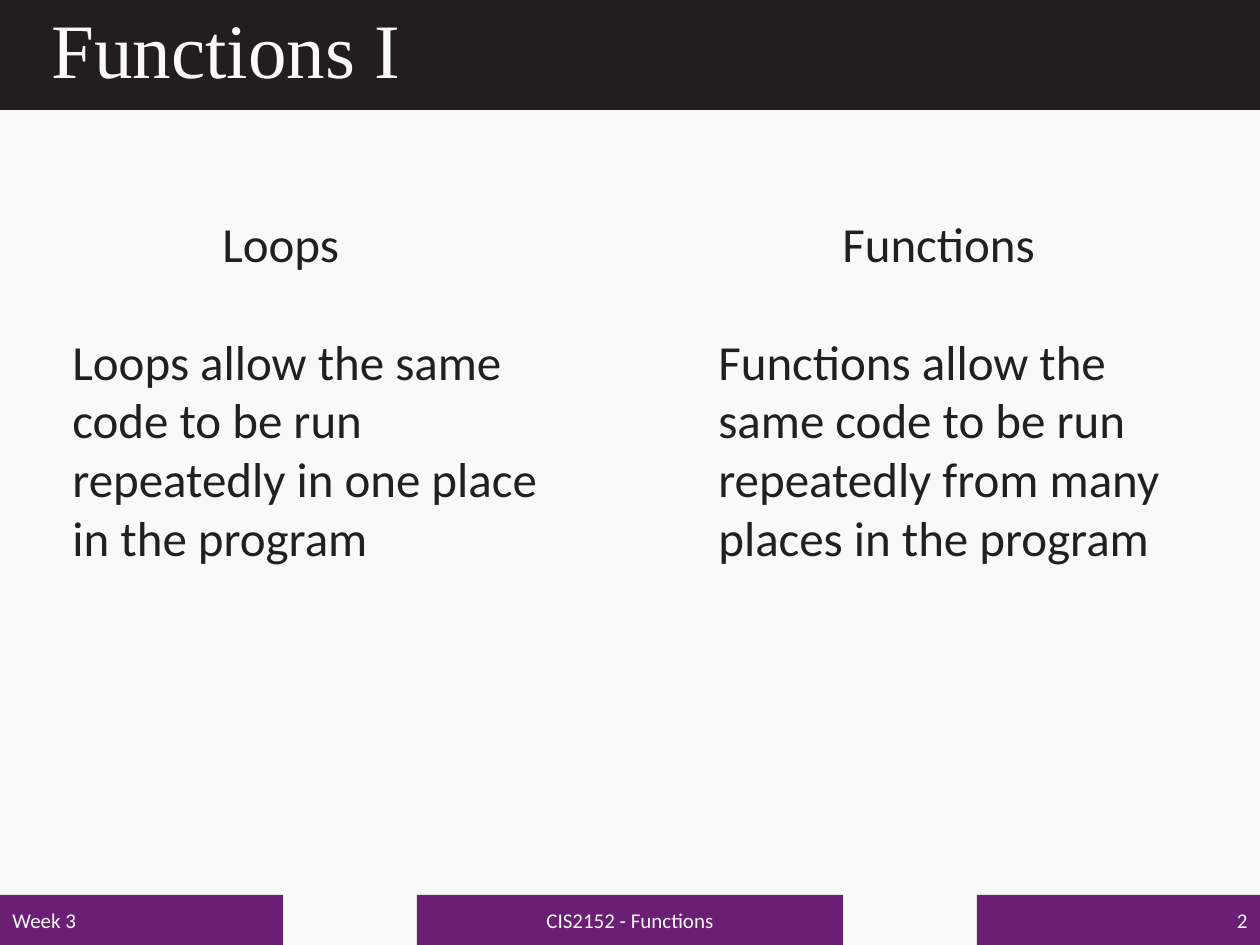
from pptx import Presentation
from pptx import util as u
from pptx.dml import color
from pptx.enum import shapes, text

PX = 914400 // 126
W, H = 1260, 945
COLORS = {"paper": "F9F9F9", "band": "221E1F", "purple": "6A1F74", "ink": "202020"}
ALIGN = text.PP_ALIGN
ANCHOR = text.MSO_ANCHOR

TITLE = "Functions I"
COLUMNS = [
    ("Loops", 210, 146,
     "Loops allow the same code to be run repeatedly in one place in the program", 60, 527),
    ("Functions", 830, 221,
     "Functions allow the same code to be run repeatedly from many places in the program", 706, 490),
]
HEADING_Y, HEADING_H = 207, 72
BODY_Y, BODY_H = 325, 251
FOOTER_H = 50
FOOTER = [
    ("Week 3", 0, 283, ALIGN.LEFT),
    ("CIS2152 - Functions", 417, 426, ALIGN.CENTER),
    ("2", W - 283, 283, ALIGN.RIGHT),
]


def rgb(name):
    return color.RGBColor.from_string(COLORS[name])


def add_bar(s, x, y, w, h, fill):
    sp = s.shapes.add_shape(shapes.MSO_SHAPE.RECTANGLE, *(v * PX for v in (x, y, w, h)))
    sp.shadow.inherit = False
    sp.fill.solid()
    sp.fill.fore_color.rgb = rgb(fill)
    sp.line.fill.background()
    return sp


def add_box(s, x, y, w, h):
    return s.shapes.add_textbox(*(v * PX for v in (x, y, w, h)))


def write(sp, words, size=28, font="Calibri", ink="ink", align=ALIGN.LEFT,
          anchor=ANCHOR.TOP, spacing=None):
    tf = sp.text_frame
    tf.word_wrap = True
    tf.vertical_anchor = anchor
    p = tf.paragraphs[0]
    p.alignment = align
    p.line_spacing = spacing
    r = p.add_run()
    r.text = words
    r.font.size = u.Pt(size)
    r.font.name = font
    r.font.color.rgb = rgb(ink)


def main():
    prs = Presentation()
    prs.slide_width, prs.slide_height = u.Inches(10), u.Inches(7.5)
    s = prs.slides.add_slide(prs.slide_layouts[6])
    s.background.fill.solid()
    s.background.fill.fore_color.rgb = rgb("paper")

    add_bar(s, 0, 0, W, 110, "band")
    write(add_box(s, 39, 0, 1183, 108), TITLE, size=44, font="Times New Roman",
          ink="paper", anchor=ANCHOR.MIDDLE, spacing=0.9)

    for words, x, w, align in FOOTER:
        write(add_bar(s, x, H - FOOTER_H, w, FOOTER_H, "purple"), words, size=12,
              ink="paper", align=align, anchor=ANCHOR.MIDDLE)

    for heading, heading_x, heading_w, body, body_x, body_w in COLUMNS:
        write(add_box(s, heading_x, HEADING_Y, heading_w, HEADING_H), heading)
        write(add_box(s, body_x, BODY_Y, body_w, BODY_H), body)

    prs.save("out.pptx")


if __name__ == "__main__":
    main()
